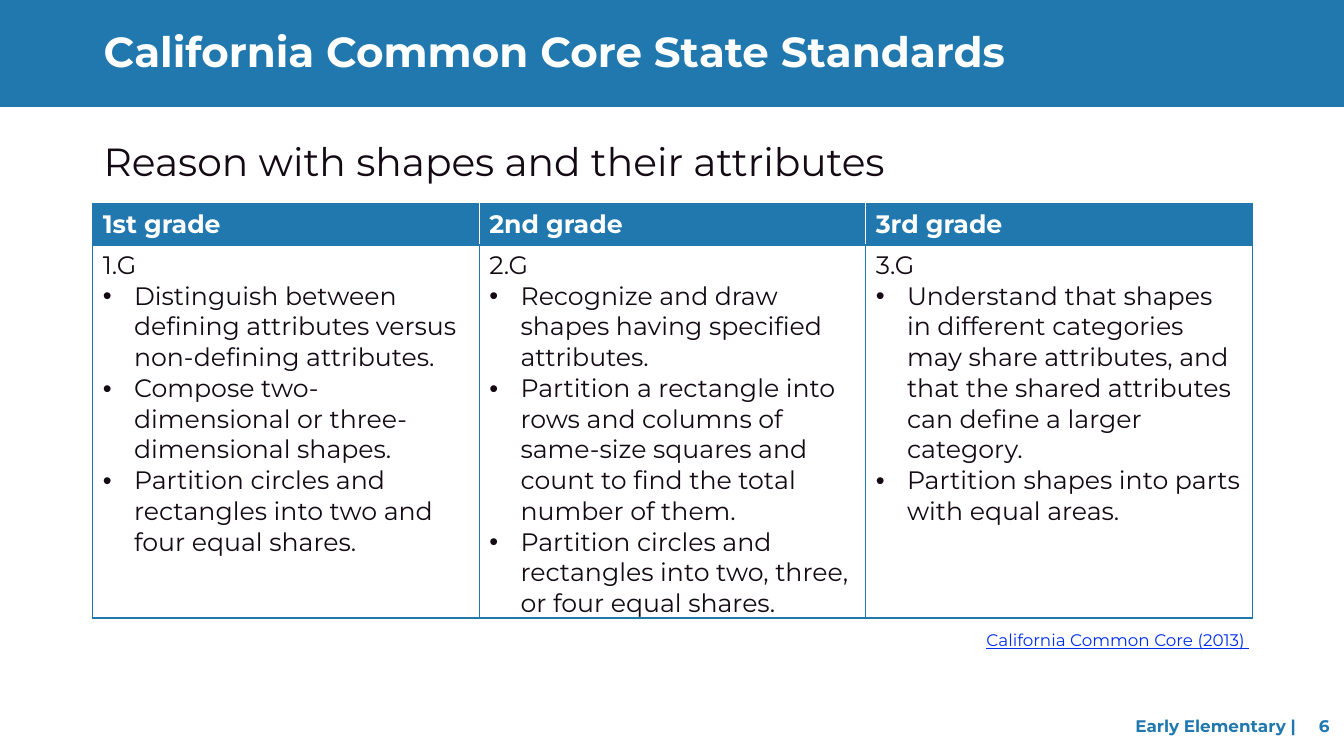
from lxml import etree
from pptx import Presentation
from pptx.dml.color import RGBColor
from pptx.enum import shapes, text
from pptx.oxml import ns
from pptx.util import Inches, Pt

BLUE = RGBColor(0x20, 0x78, 0xAE)
DARK = RGBColor(0x14, 0x0A, 0x14)
LINK = RGBColor(0x00, 0x2E, 0xE9)
WHITE = RGBColor(0xFF, 0xFF, 0xFF)
FONT = "Montserrat"

GRADES = [
    ("1st grade", "1.G", [
        "Distinguish between defining attributes versus non-defining attributes.",
        "Compose two-dimensional or three-dimensional shapes.",
        "Partition circles and rectangles into two and four equal shares.",
    ]),
    ("2nd grade", "2.G", [
        "Recognize and draw shapes having specified attributes.",
        "Partition a rectangle into rows and columns of same-size squares "
        "and count to find the total number of them.",
        "Partition circles and rectangles into two, three, or four equal shares.",
    ]),
    ("3rd grade", "3.G", [
        "Understand that shapes in different categories may share attributes, "
        "and that the shared attributes can define a larger category.",
        "Partition shapes into parts with equal areas.",
    ]),
]


def add_node(parent, tag, **attrs):
    node = etree.SubElement(parent, ns.qn(tag))
    for key, value in attrs.items():
        node.set(key, str(value))
    return node


def add_run(para, words, size, color, bold=False, line=False):
    run = para.add_run()
    run.text = words
    font = run.font
    font.name = FONT
    font.size = Pt(size)
    font.color.rgb = color
    font.bold = bold
    font.underline = line


def add_box(slide, left, top, width, height):
    box = slide.shapes.add_textbox(
        Inches(left), Inches(top), Inches(width), Inches(height))
    box.text_frame.word_wrap = True
    return box.text_frame


def add_banner(slide):
    bar = slide.shapes.add_shape(
        shapes.MSO_SHAPE.RECTANGLE, 0, 0, Inches(13.33), Inches(1.06))
    bar.shadow.inherit = False
    bar.fill.solid()
    bar.fill.fore_color.rgb = BLUE
    bar.line.fill.background()


def add_heading(slide, words, top, height, size, color, bold):
    para = add_box(slide, 0.93, top, 11.85, height).paragraphs[0]
    para.line_spacing = 0.9
    add_run(para, words, size, color, bold)


def add_footer(slide):
    frame = add_box(slide, 9.49, 7, 3.81, 0.4)
    frame.vertical_anchor = text.MSO_ANCHOR.MIDDLE
    frame.margin_left = Inches(1.77)
    para = frame.paragraphs[0]
    tabs = add_node(para._p.get_or_add_pPr(), "a:tabLst")
    add_node(tabs, "a:tab", pos=Inches(1.82), algn="l")
    add_run(para, "Early Elementary |\t6", 12, BLUE, True)


def add_source(slide):
    para = add_box(slide, 0.85, 6.2, 11.64, 0.3).paragraphs[0]
    para.alignment = text.PP_ALIGN.RIGHT
    add_run(para, "California Common Core (2013) ", 12, LINK, line=True)


def add_bullet(frame, words):
    para = frame.add_paragraph()
    props = para._p.get_or_add_pPr()
    props.set("marL", str(Inches(0.31)))
    props.set("indent", str(-Inches(0.31)))
    add_node(props, "a:buFont", typeface="Arial")
    add_node(props, "a:buChar", char="•")
    add_run(para, words, 18, DARK)


def style_cell(cell, fill, left, right):
    props = cell._tc.get_or_add_tcPr()
    for side, color in zip("LRTB", (left, right, BLUE, BLUE)):
        edge = add_node(props, f"a:ln{side}", w=Pt(1))
        paint = add_node(edge, "a:solidFill")
        add_node(paint, "a:srgbClr", val=color)
    cell.fill.solid()
    cell.fill.fore_color.rgb = fill


def add_grades(slide):
    last = len(GRADES) - 1
    table = slide.shapes.add_table(
        2, len(GRADES), Inches(0.92), Inches(2.02),
        Inches(11.5), Inches(4.11)).table
    table.rows[0].height = Inches(0.41)
    table.rows[1].height = Inches(3.7)
    for col, (grade, code, goals) in enumerate(GRADES):
        head, body = table.cell(0, col), table.cell(1, col)
        style_cell(head, BLUE, WHITE if col else BLUE,
                   WHITE if col < last else BLUE)
        style_cell(body, WHITE, BLUE, BLUE)
        add_run(head.text_frame.paragraphs[0], grade, 18, WHITE, True)
        add_run(body.text_frame.paragraphs[0], code, 18, DARK)
        for goal in goals:
            add_bullet(body.text_frame, goal)


def main():
    deck = Presentation()
    deck.slide_width = Inches(13.33)
    deck.slide_height = Inches(7.5)
    slide = deck.slides.add_slide(deck.slide_layouts[6])
    add_banner(slide)
    add_footer(slide)
    add_heading(slide, "California Common Core State Standards",
                0.26, 0.56, 30, WHITE, True)
    add_heading(slide, "Reason with shapes and their attributes",
                1.37, 0.6, 28, DARK, False)
    add_grades(slide)
    add_source(slide)
    deck.save("out.pptx")


if __name__ == "__main__":
    main()
